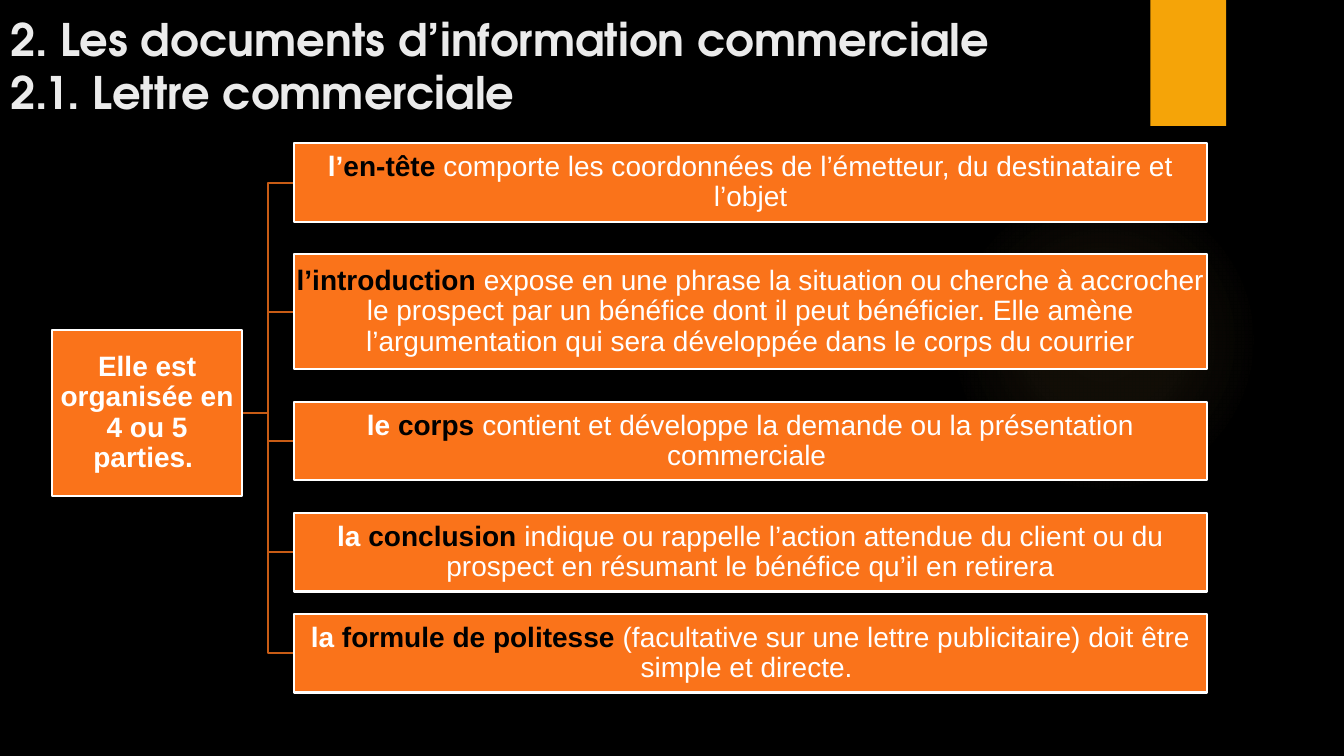
"""Build the slide on the parts of a business letter."""
import pptx
import pptx.dml.color
import pptx.enum.shapes
import pptx.enum.text
import pptx.oxml
import pptx.oxml.ns
import pptx.util

BLACK = pptx.dml.color.RGBColor(0x00, 0x00, 0x00)
WHITE = pptx.dml.color.RGBColor(0xFF, 0xFF, 0xFF)
PALE = pptx.dml.color.RGBColor(0xEB, 0xEB, 0xEB)
AMBER = pptx.dml.color.RGBColor(0xF5, 0xA4, 0x08)
GLOW = pptx.dml.color.RGBColor(0xFA, 0xC9, 0x6A)
ORANGE = pptx.dml.color.RGBColor(0xFA, 0x73, 0x1A)
RUST = pptx.dml.color.RGBColor(0xC8, 0x5C, 0x15)
RECTANGLE = pptx.enum.shapes.MSO_SHAPE.RECTANGLE

presentation = pptx.Presentation()
presentation.slide_width = pptx.util.Inches(13.33)
presentation.slide_height = pptx.util.Inches(7.5)
COLUMN = presentation.slide_width / 100
ROW = presentation.slide_height / 100


def add_block(kind, left, top, width, height, fill=None, line=None):
    """Add a preset shape placed in columns and rows of the grid."""
    shape = slide.shapes.add_shape(
        kind, round(left * COLUMN), round(top * ROW), round(width * COLUMN), round(height * ROW))
    shape.shadow.inherit = False
    if fill is not None:
        shape.fill.solid()
        shape.fill.fore_color.rgb = fill
    if line is None:
        shape.line.fill.background()
    else:
        shape.line.color.rgb = line
        shape.line.width = pptx.util.Pt(1.5)
    return shape


def add_run(paragraph, text, font="Arial", size=20, color=WHITE, bold=True):
    """Add one formatted run to a paragraph."""
    run = paragraph.add_run()
    run.text = text
    run.font.name = font
    run.font.size = pptx.util.Pt(size)
    run.font.bold = bold
    run.font.color.rgb = color


slide = presentation.slides.add_slide(presentation.slide_layouts[5])
slide.background.fill.solid()
slide.background.fill.fore_color.rgb = BLACK

glow = add_block(pptx.enum.shapes.MSO_SHAPE.OVAL, 70.6, 24.4, 23.1, 41.07)
stops = "".join(
    f'<a:gs pos="{position * 1000}"><a:srgbClr val="{GLOW}">'
    f'<a:alpha val="{opacity * 1000}"/></a:srgbClr></a:gs>'
    for position, opacity in ((0, 7), (36, 6), (69, 0)))
gradient = pptx.oxml.parse_xml(
    f'<a:gradFill {pptx.oxml.ns.nsdecls("a")}><a:gsLst>{stops}</a:gsLst><a:path path="circle">'
    '<a:fillToRect l="50000" t="50000" r="50000" b="50000"/></a:path></a:gradFill>')
glow.element.spPr.find(pptx.oxml.ns.qn("a:prstGeom")).addnext(gradient)

add_block(RECTANGLE, 85.6, 0, 5.63, 16.67, fill=AMBER)

title = slide.shapes.title
title.left, title.top = 0, 0
title.width, title.height = round(76.8 * COLUMN), round(16.4 * ROW)
title.text_frame.word_wrap = True
title.text_frame.auto_size = pptx.enum.text.MSO_AUTO_SIZE.NONE
title.text_frame.vertical_anchor = pptx.enum.text.MSO_ANCHOR.BOTTOM
heading = title.text_frame.paragraphs[0]
heading.alignment = pptx.enum.text.PP_ALIGN.LEFT
heading_format = {"font": "TeX Gyre Adventor", "size": 32, "color": PALE}
add_run(heading, "2. Les documents d’information commerciale", **heading_format)
heading.add_line_break()
add_run(heading, "2.1. Lettre commerciale", **heading_format)

ROOT_LEFT, ROOT_TOP, ROOT_WIDTH, ROOT_HEIGHT = 3.9, 43.6, 14.1, 22
PART_LEFT, PART_WIDTH = 21.9, 67.9
SHORT, TALL = 10.4, 15.2
GAP, LAST_GAP = 4.3, 2.95

parts = [
    (SHORT, GAP, "l’", "en-tête ",
     "comporte les coordonnées de l’émetteur, du destinataire et l’objet"),
    (TALL, GAP, "", "l’introduction ",
     "expose en une phrase la situation ou cherche à accrocher le prospect par un bénéfice "
     "dont il peut bénéficier. Elle amène l’argumentation qui sera développée dans le corps "
     "du courrier"),
    (SHORT, GAP, "le ", "corps ",
     "contient et développe la demande ou la présentation commerciale "),
    (SHORT, LAST_GAP, "la ", "conclusion ",
     "indique ou rappelle l’action attendue du client ou du prospect en résumant le bénéfice "
     "qu’il en retirera"),
    (SHORT, 0, "la ", "formule de politesse ",
     "(facultative sur une lettre publicitaire) doit être simple et directe. "),
]

boxes = [(ROOT_LEFT, ROOT_TOP, ROOT_WIDTH, ROOT_HEIGHT,
          [("Elle est organisée en 4 ou 5 parties. ", WHITE, True)])]
top = 18.95
for height, gap, article, name, description in parts:
    runs = [(article, WHITE, True), (name, BLACK, True), (description, WHITE, False)]
    boxes.append((PART_LEFT, top, PART_WIDTH, height, runs))
    top += height + gap

root_right = (ROOT_LEFT + ROOT_WIDTH) * COLUMN
root_middle = (ROOT_TOP + ROOT_HEIGHT / 2) * ROW
part_left = PART_LEFT * COLUMN
trunk = (root_right + part_left) / 2
for left, top, width, height, runs in boxes[1:]:
    part_middle = (top + height / 2) * ROW
    builder = slide.shapes.build_freeform(round(root_right), round(root_middle))
    builder.add_line_segments(
        [(trunk, root_middle), (trunk, part_middle), (part_left, part_middle)], close=False)
    branch = builder.convert_to_shape()
    branch.shadow.inherit = False
    branch.fill.background()
    branch.line.color.rgb = RUST
    branch.line.width = pptx.util.Pt(1.5)

for left, top, width, height, runs in boxes:
    box = add_block(RECTANGLE, left, top, width, height, fill=ORANGE, line=WHITE)
    frame = box.text_frame
    frame.word_wrap = True
    frame.vertical_anchor = pptx.enum.text.MSO_ANCHOR.MIDDLE
    frame.margin_left = frame.margin_right = pptx.util.Inches(0.01)
    frame.margin_top = frame.margin_bottom = pptx.util.Inches(0.01)
    paragraph = frame.paragraphs[0]
    paragraph.alignment = pptx.enum.text.PP_ALIGN.CENTER
    paragraph.line_spacing = 0.9
    for text, color, bold in runs:
        if text:
            add_run(paragraph, text, color=color, bold=bold)

presentation.save("out.pptx")
